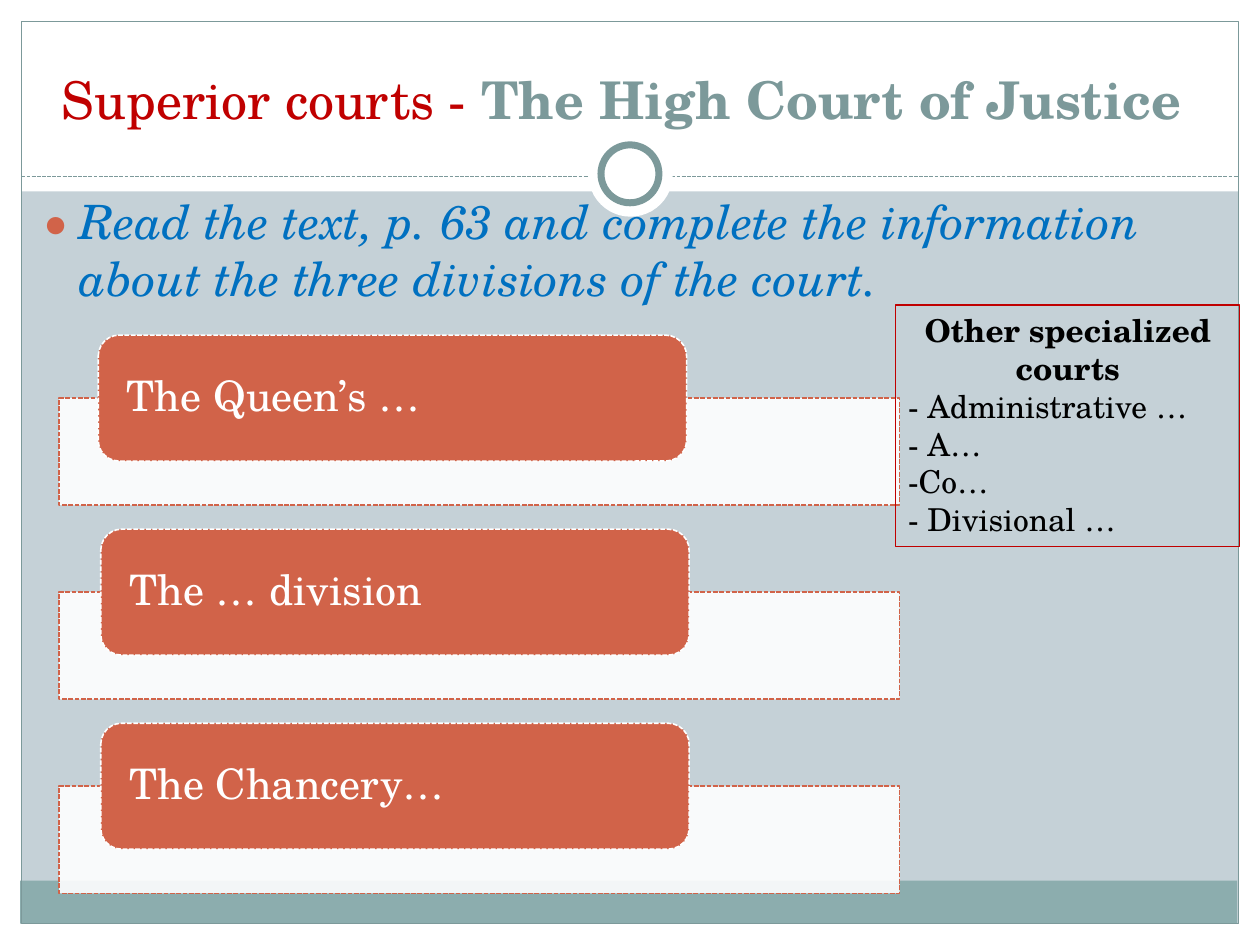
"""Build the slide on the divisions of the High Court of Justice."""
from dataclasses import dataclass
from typing import Optional

from lxml.etree import SubElement
from pptx import Presentation
from pptx.dml.color import RGBColor
from pptx.enum.dml import MSO_LINE
from pptx.enum.shapes import MSO_CONNECTOR, MSO_SHAPE
from pptx.enum.text import MSO_ANCHOR, PP_ALIGN
from pptx.oxml.ns import qn
from pptx.util import Inches, Pt

FONT = "TeX Gyre Schola"
WHITE, TEAL, ORANGE, RED = "FFFFFF", "7C999A", "D16349", "C00000"


@dataclass
class Outline:
    color: str
    width: float = 0.75
    dash: Optional[MSO_LINE] = None


@dataclass
class Division:
    label: str
    left: float


def rgb(value: str) -> RGBColor:
    return RGBColor.from_string(value)


def draw_outline(line, outline: Outline) -> None:
    line.color.rgb = rgb(outline.color)
    line.width = Pt(outline.width)
    if outline.dash:
        line.dash_style = outline.dash


def add_block(slide, box: tuple, kind=MSO_SHAPE.RECTANGLE, fill: Optional[str] = None,
              outline: Optional[Outline] = None, opacity: int = 100):
    shape = slide.shapes.add_shape(kind, *map(Inches, box))
    shape.shadow.inherit = False
    if fill:
        shape.fill.solid()
        shape.fill.fore_color.rgb = rgb(fill)
        if opacity < 100:
            color = shape.fill._xPr.find(".//" + qn("a:srgbClr"))
            SubElement(color, qn("a:alpha"), val=str(opacity * 1000))
    else:
        shape.fill.background()
    if outline:
        draw_outline(shape.line, outline)
    else:
        shape.line.fill.background()
    return shape


def add_text_frame(slide, box: tuple):
    frame = slide.shapes.add_textbox(*map(Inches, box)).text_frame
    frame.word_wrap = True
    return frame


def add_run(paragraph, text: str, size: float, color: str, **styles: bool) -> None:
    run = paragraph.add_run()
    run.text = text
    for attribute, value in {"name": FONT, "size": Pt(size), **styles}.items():
        setattr(run.font, attribute, value)
    run.font.color.rgb = rgb(color)


def add_bullet(paragraph, char: str, indent: float = 0, color: Optional[str] = None,
               percent: int = 100) -> None:
    properties = paragraph._p.get_or_add_pPr()
    properties.set("marL", str(Inches(indent)))
    properties.set("indent", str(-Inches(indent)))
    if color:
        SubElement(SubElement(properties, qn("a:buClr")), qn("a:srgbClr"), val=color)
    SubElement(properties, qn("a:buSzPct"), val=str(percent * 1000))
    SubElement(properties, qn("a:buFont"), typeface=FONT)
    SubElement(properties, qn("a:buChar"), char=char)


def draw_frame(slide) -> None:
    slide.background.fill.solid()
    slide.background.fill.fore_color.rgb = rgb("C5D1D7")
    for margin in ((0, 7.33, 10, 0.17), (0, 0, 10, 1.52), (0, 0, 0.17, 7.5), (9.83, 0, 0.17, 7.5)):
        add_block(slide, margin, fill=WHITE)
    add_block(slide, (0.16, 6.99, 9.66, 0.34), fill="8CADAE")
    add_block(slide, (0.17, 0.17, 9.66, 7.16), outline=Outline(TEAL))
    divider = slide.shapes.add_connector(MSO_CONNECTOR.STRAIGHT, *map(Inches, (0.17, 1.4, 9.83, 1.4)))
    draw_outline(divider.line, Outline(TEAL, dash=MSO_LINE.SQUARE_DOT))
    SubElement(divider._element.spPr, qn("a:effectLst"))
    add_block(slide, (4.67, 1.05, 0.67, 0.67), MSO_SHAPE.OVAL, WHITE)
    add_block(slide, (4.77, 1.15, 0.46, 0.46), MSO_SHAPE.OVAL, WHITE, Outline(TEAL, 4))


def draw_headings(slide) -> None:
    title = add_text_frame(slide, (0.33, 0.25, 9.33, 0.83))
    title.vertical_anchor = MSO_ANCHOR.BOTTOM
    heading = title.paragraphs[0]
    heading.alignment = PP_ALIGN.CENTER
    add_run(heading, "Superior courts - ", 29.7, RED)
    add_run(heading, "The High Court of Justice ", 29.7, TEAL, bold=True)
    task = add_text_frame(slide, (0.23, 1.48, 9.3, 5)).paragraphs[0]
    task.space_before = Pt(5.4)
    add_bullet(task, "●", 0.3, ORANGE, 85)
    add_run(task, "Read the text, p. 63 and complete the information about the three divisions of the court.",
            27, "0070C0", italic=True)


def draw_division(slide, division: Division, top: float) -> None:
    add_block(slide, (0.47, top + 0.5, 6.67, 0.85), fill=WHITE, opacity=90,
              outline=Outline(ORANGE, 0.9, MSO_LINE.SQUARE_DOT))
    card = add_block(slide, (division.left, top, 4.67, 1), MSO_SHAPE.ROUNDED_RECTANGLE, ORANGE,
                     Outline(WHITE, 0.9, MSO_LINE.SQUARE_DOT))
    frame = card.text_frame
    layout = {"margin_left": Inches(0.18), "margin_right": Inches(0.18), "margin_top": 0,
              "margin_bottom": 0, "vertical_anchor": MSO_ANCHOR.MIDDLE, "word_wrap": True}
    for attribute, value in layout.items():
        setattr(frame, attribute, value)
    label = frame.paragraphs[0]
    label.alignment = PP_ALIGN.LEFT
    label.line_spacing = 0.9
    add_run(label, division.label, 24, WHITE)


def draw_specialized_courts(slide) -> None:
    frame = add_block(slide, (7.11, 2.42, 2.73, 1.92), outline=Outline(RED)).text_frame
    frame.word_wrap = True
    frame.vertical_anchor = MSO_ANCHOR.TOP
    heading = frame.paragraphs[0]
    heading.alignment = PP_ALIGN.CENTER
    add_run(heading, "Other specialized courts", 18, "000000", bold=True)
    courts = (("- Administrative …", False), ("- A…", False), ("Co…", True), (" Divisional …", True))
    for court, bulleted in courts:
        entry = frame.add_paragraph()
        entry.alignment = PP_ALIGN.LEFT
        if bulleted:
            add_bullet(entry, "-")
        add_run(entry, court, 18, "000000")


def main() -> None:
    presentation = Presentation()
    presentation.slide_width, presentation.slide_height = Inches(10), Inches(7.5)
    slide = presentation.slides.add_slide(presentation.slide_layouts[6])
    draw_frame(slide)
    draw_headings(slide)
    divisions = (Division("The Queen’s …", 0.78), Division("The … division", 0.8),
                 Division("The Chancery…", 0.8))
    for row, division in enumerate(divisions):
        draw_division(slide, division, 2.66 + 1.54 * row)
    draw_specialized_courts(slide)
    presentation.save("out.pptx")


if __name__ == "__main__":
    main()
